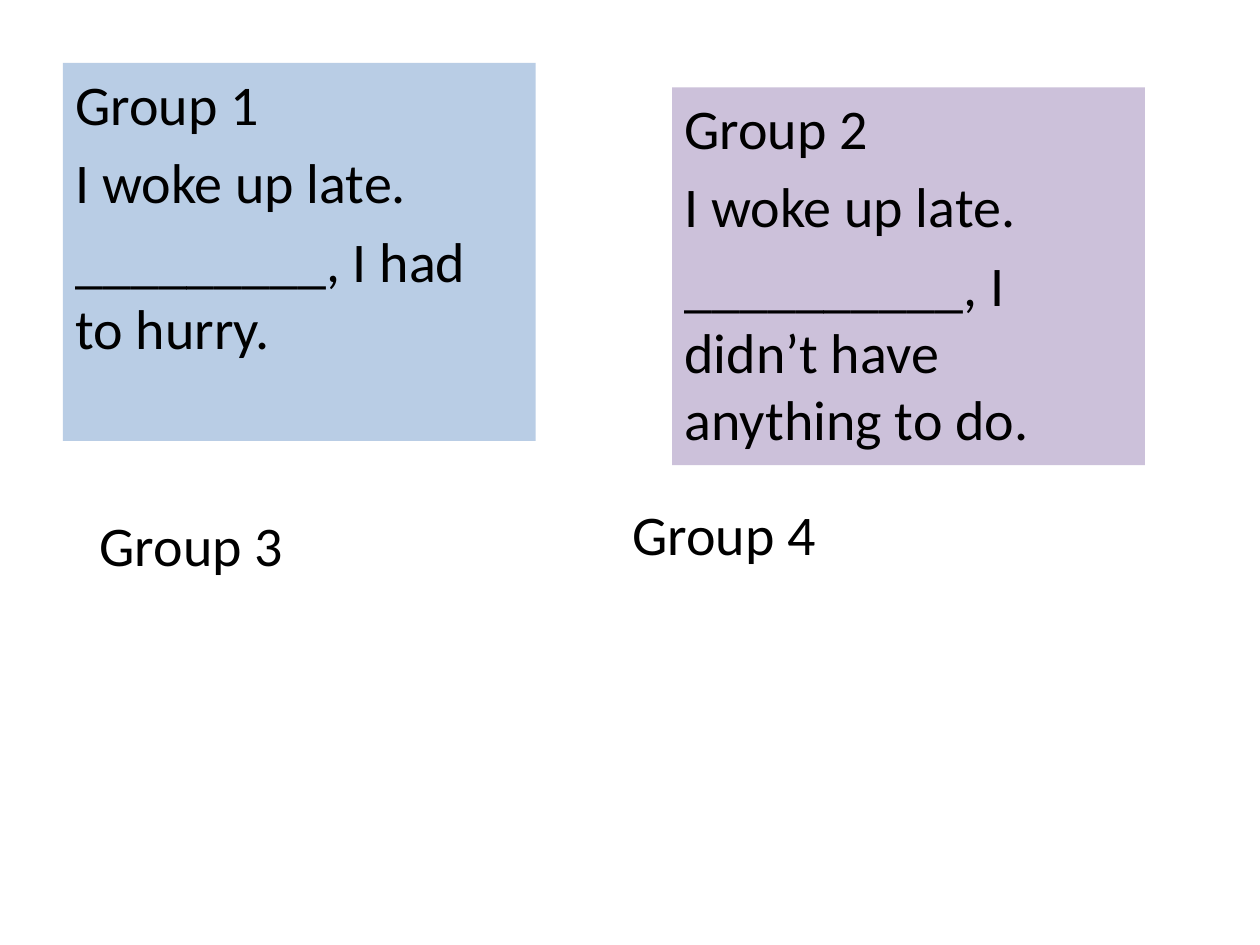
from pptx import Presentation
from pptx.dml.color import RGBColor
from pptx.util import Cm, Pt

BLACK = RGBColor(0x00, 0x00, 0x00)
BLUE = RGBColor(0xB9, 0xCD, 0xE5)
PURPLE = RGBColor(0xCC, 0xC1, 0xDA)
BLANK = 6

prs = Presentation()
prs.slide_width, prs.slide_height = Cm(25.4), Cm(19.05)
slide = prs.slides.add_slide(prs.slide_layouts[BLANK])

# left, top (cm), fill, lines
groups = [
    (1.27, 1.27, BLUE,
     ["Group 1", "I woke up late.", "_________, I had to hurry."]),
    (13.55, 1.76, PURPLE,
     ["Group 2", "I woke up late.",
      "__________, I didn’t have anything to do."]),
    (12.5, 9.95, None, ["Group 4"]),
    (1.76, 10.16, None, ["Group 3"]),
]

for left, top, fill, lines in groups:
    box = slide.shapes.add_textbox(Cm(left), Cm(top), Cm(9.53), Cm(7.62))
    if fill is not None:
        box.fill.solid()
        box.fill.fore_color.rgb = fill
    frame = box.text_frame
    frame.word_wrap = True
    for i, line in enumerate(lines):
        para = frame.add_paragraph() if i else frame.paragraphs[0]
        para.space_before = Pt(6.4)
        run = para.add_run()
        run.text = line
        run.font.name = "Calibri"
        run.font.size = Pt(32)
        run.font.color.rgb = BLACK

prs.save("out.pptx")
